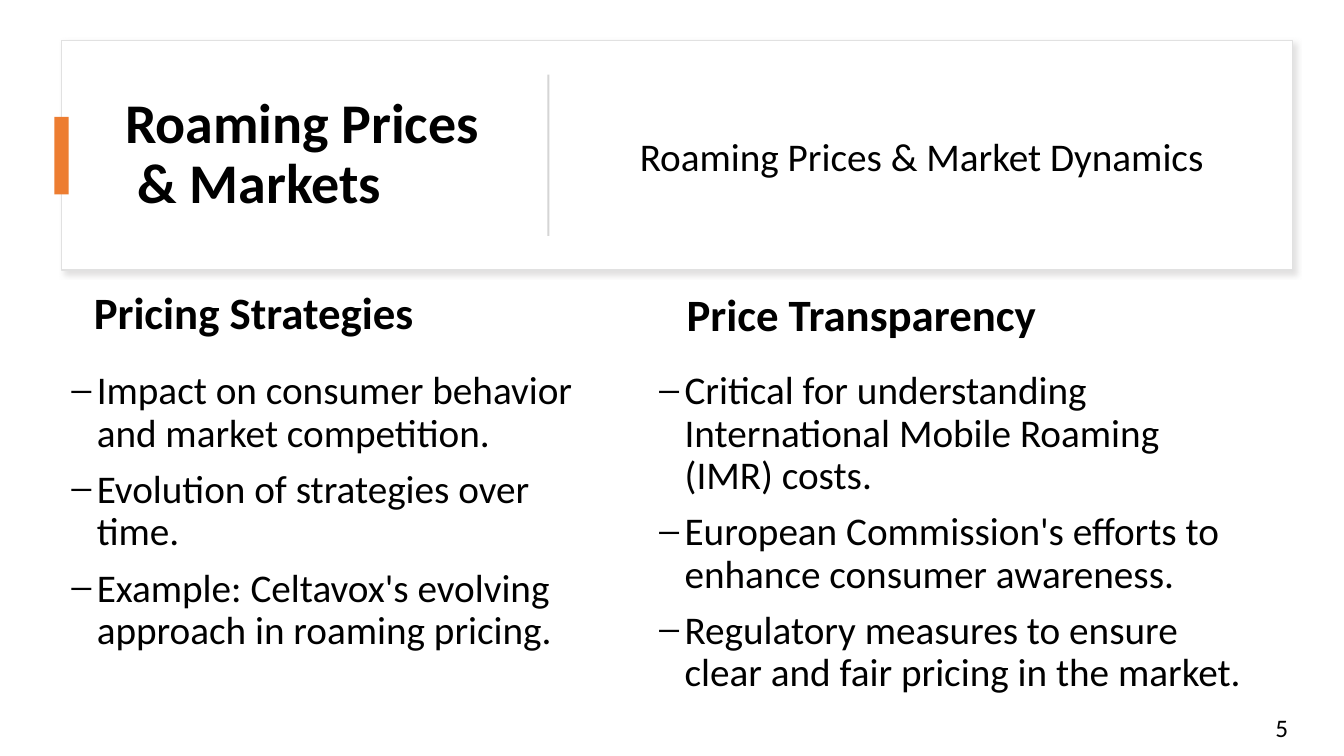
from dataclasses import dataclass
from lxml.etree import SubElement
from pptx import Presentation
from pptx.dml.color import RGBColor
from pptx.enum.shapes import MSO_SHAPE as Preset
from pptx.enum.text import MSO_ANCHOR as Anchor, MSO_AUTO_SIZE as AutoSize, PP_ALIGN as Align
from pptx.oxml.ns import qn
from pptx.util import Inches, Pt


@dataclass(frozen=True)
class Theme:
    """Colours and type sizes of the slide."""
    font: str = "Calibri"
    ink: str = "000000"
    paper: str = "FFFFFF"
    border: str = "E1E1E1"
    divider: str = "D5D5D5"
    accent: str = "ED7D31"
    shadow: str = "C5C3C3"
    title: int = 40
    heading: int = 32
    body: int = 28
    number: int = 18


THEME = Theme()
COLUMNS = [
    ("Pricing Strategies", (0.61, 2.83, 5.64), 0.22, [
        "Impact on consumer behavior and market competition.",
        "Evolution of strategies over time.",
        "Example: Celtavox's evolving approach in roaming pricing.",
    ]),
    ("Price Transparency", (6.44, 2.85, 6.11), 0.27, [
        "Critical for understanding International Mobile Roaming (IMR) costs.",
        "European Commission's efforts to enhance consumer awareness.",
        "Regulatory measures to ensure clear and fair pricing in the market.",
    ]),
]
LIST_TOP = 3.63


def place(shape, left, top, width, height):
    """Move a shape to a box given in inches."""
    shape.left, shape.top = Inches(left), Inches(top)
    shape.width, shape.height = Inches(width), Inches(height)


def write(shape, lines, size, bold=False, align=Align.LEFT, anchor=Anchor.TOP, spacing=1.0, before=0):
    """Fill a shape with formatted paragraphs."""
    frame = shape.text_frame
    frame.text = "\n".join(lines)
    frame.word_wrap = True
    frame.auto_size = AutoSize.NONE
    frame.vertical_anchor = anchor
    for paragraph in frame.paragraphs:
        paragraph.alignment = align
        paragraph.line_spacing = spacing
        paragraph.space_before = Pt(before)
        for run in paragraph.runs:
            run.font.name = THEME.font
            run.font.size = Pt(size)
            run.font.bold = bold
            run.font.color.rgb = RGBColor.from_string(THEME.ink)


def add_dashes(shape):
    """Give every paragraph a hanging dash bullet."""
    for paragraph in shape.text_frame.paragraphs:
        properties = paragraph._p.get_or_add_pPr()
        properties.set("marL", str(Inches(0.25)))
        properties.set("indent", str(-Inches(0.25)))
        SubElement(properties, qn("a:buFont"), typeface=THEME.font)
        SubElement(properties, qn("a:buChar"), char="─")


def add_block(slide, left, top, width, height, fill, line=None):
    """Add a flat rectangle and return it."""
    block = slide.shapes.add_shape(
        Preset.RECTANGLE, Inches(left), Inches(top), Inches(width), Inches(height))
    block.shadow.inherit = False
    block.fill.solid()
    block.fill.fore_color.rgb = RGBColor.from_string(fill)
    if line:
        block.line.color.rgb = RGBColor.from_string(line)
        block.line.width = Pt(1)
    else:
        block.line.fill.background()
    return block


def add_soft_shadow(block):
    """Add a faint shadow below and to the right of a block."""
    effects = block._element.spPr.find(qn("a:effectLst"))
    shadow = SubElement(effects, qn("a:outerShdw"), blurRad=str(Pt(4)), dist=str(Pt(3)),
                        dir=str(45 * 60000), algn="tl", rotWithShape="0")
    colour = SubElement(shadow, qn("a:srgbClr"), val=THEME.shadow)
    SubElement(colour, qn("a:alpha"), val="50000")


def add_text(slide, left, top, width, height, text, size, align=Align.LEFT):
    """Add a one-line text box."""
    box = slide.shapes.add_textbox(Inches(left), Inches(top), Inches(width), Inches(height))
    write(box, [text], size, align=align)


def build_header(slide, left, top, width, height):
    """Build the framed header with title, divider and subtitle."""
    card = add_block(slide, left, top, width, height, THEME.paper, THEME.border)
    add_soft_shadow(card)
    slide.shapes._spTree.insert(2, card._element)
    title = slide.shapes.title
    place(title, left + 0.53, top + 0.3, 4.22, height - 0.6)
    write(title, ["Roaming Prices\v & Markets"], THEME.title, bold=True,
          anchor=Anchor.MIDDLE, spacing=0.9)
    add_block(slide, left - 0.07, top + 0.76, 0.14, 0.77, THEME.accent)
    add_block(slide, left + 4.82, top + 0.34, 0.02, 1.6, THEME.divider)
    add_text(slide, left + 5.27, top + 0.86, 6.52, 0.57,
             "Roaming Prices & Market Dynamics", THEME.body, Align.CENTER)


def build_column(heading, points, box, inset, title, lines):
    """Build a heading with its dashed list below."""
    left, top, width = box
    place(heading, left + inset, top, 5.64, 0.9)
    write(heading, [title], THEME.heading, bold=True, spacing=0.9, before=10)
    place(points, left, LIST_TOP, width, 3.8)
    write(points, lines, THEME.body, spacing=0.9, before=10)
    add_dashes(points)


def main():
    """Build the slide and save it."""
    deck = Presentation()
    deck.slide_width, deck.slide_height = Inches(13.33), Inches(7.5)
    comparison = deck.slide_layouts.get_by_name("Comparison")
    slide = deck.slides.add_slide(comparison)
    build_header(slide, 0.61, 0.4, 12.21, 2.28)
    bodies = list(slide.placeholders)[1:]
    for (title, box, inset, lines), heading, points in zip(COLUMNS, bodies[::2], bodies[1::2]):
        build_column(heading, points, box, inset, title, lines)
    add_text(slide, 12.55, 7.02, 0.39, 0.4, "5", THEME.number)
    deck.save("out.pptx")


if __name__ == "__main__":
    main()
